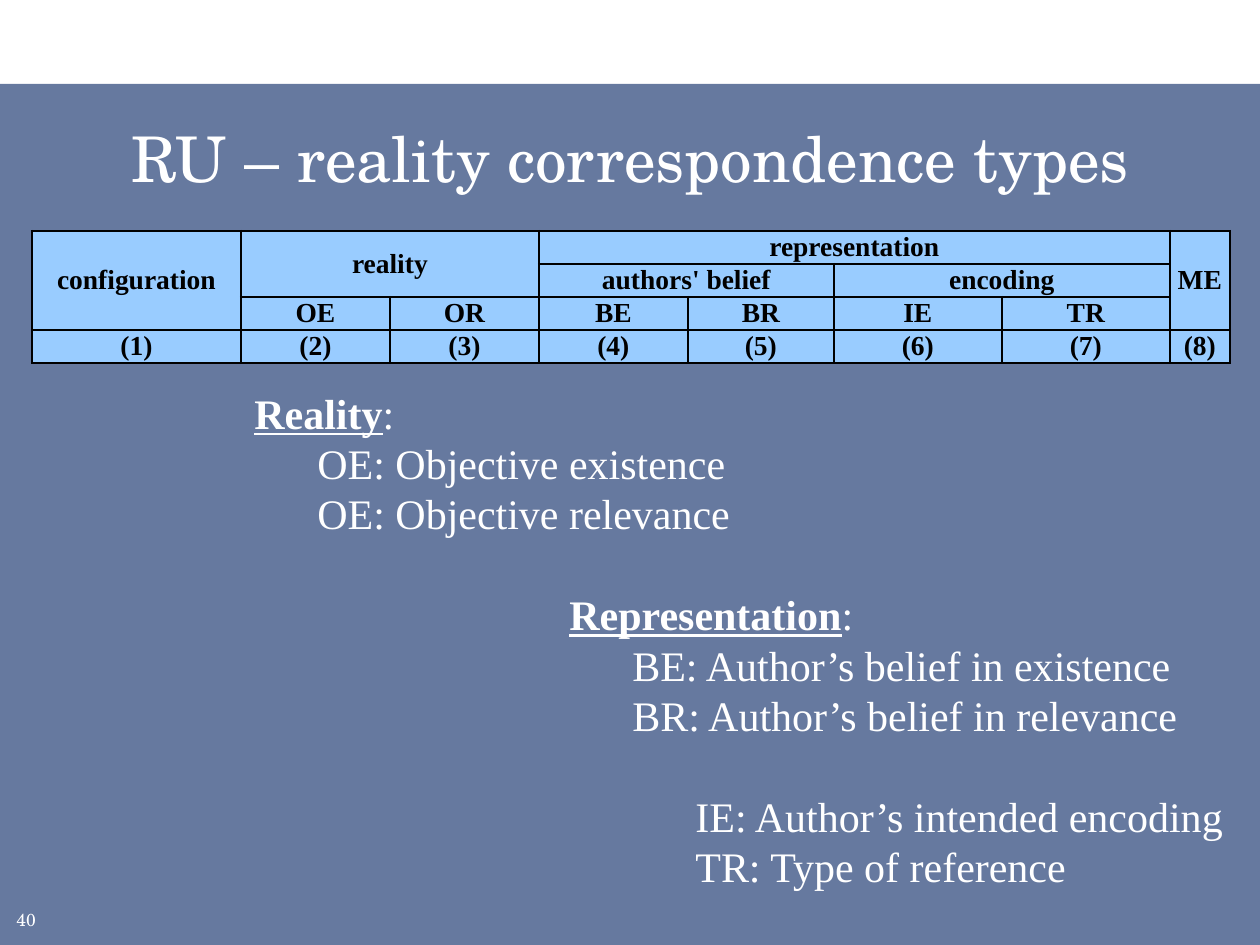
from lxml import etree
from pptx import Presentation
from pptx import util as u
from pptx.dml.color import RGBColor
from pptx.enum import shapes, text
from pptx.oxml import ns

PX = u.Inches(1) // 126
NAVY = RGBColor(0x00, 0x20, 0x60)
SKY = RGBColor(0x99, 0xCC, 0xFF)
WHITE = RGBColor(0xFF, 0xFF, 0xFF)
BLACK = RGBColor(0x00, 0x00, 0x00)
SCHOOL = "TeX Gyre Schola"
TIMES = "Times New Roman"
COLS = [209, 149, 149, 149, 146, 168, 168, 60]
ROW = 33
HEADS = [
    (0, 0, 3, 1, "configuration"), (0, 1, 2, 2, "reality"),
    (0, 3, 1, 4, "representation"), (0, 7, 3, 1, "ME"),
    (1, 3, 1, 2, "authors' belief"), (1, 5, 1, 2, "encoding"),
]
CODES = ["OE", "OR", "BE", "BR", "IE", "TR"]
TERMS = [
    (0, 0, "Reality", ":"),
    (1, 0, "", "OE: Objective existence"),
    (1, 0, "", "OE: Objective relevance"),
    (5, 1, "Representation", ":"),
    (6, 0, "", "BE: Author’s belief in existence"),
    (6, 0, "", "BR: Author’s belief in relevance"),
    (7, 1, "", "IE: Author’s intended encoding"),
    (7, 0, "", "TR: Type of reference"),
]


def px(*nums):
    return [u.Emu(n * PX) for n in nums]


def add_run(para, words, face, size, color, bold=False, line=False):
    run = para.add_run()
    run.text = words
    font = run.font
    font.name, font.size = face, u.Pt(size)
    font.bold, font.underline = bold, line
    font.color.rgb = color


def add_panel(slide, box):
    panel = slide.shapes.add_shape(shapes.MSO_SHAPE.RECTANGLE, *px(*box))
    panel.shadow.inherit = False
    panel.line.fill.background()
    panel.fill.solid()
    panel.fill.fore_color.rgb = NAVY
    tint = panel._element.spPr.find(".//" + ns.qn("a:srgbClr"))
    etree.SubElement(tint, ns.qn("a:alpha"), val="60000")
    slide.shapes._spTree.insert(2, panel._element)


def add_title(slide, box):
    title = slide.shapes.title
    title.left, title.top, title.width, title.height = px(*box)
    frame = title.text_frame
    frame.vertical_anchor = text.MSO_ANCHOR.MIDDLE
    para = frame.paragraphs[0]
    para.alignment = text.PP_ALIGN.CENTER
    add_run(para, "RU – reality correspondence types", SCHOOL, 36, WHITE)


def add_page(slide, box):
    frame = slide.shapes.add_textbox(*px(*box)).text_frame
    frame.word_wrap = True
    frame.margin_top = frame.margin_bottom = 0
    frame.vertical_anchor = text.MSO_ANCHOR.MIDDLE
    add_run(frame.paragraphs[0], "40", SCHOOL, 10, WHITE)


def style_cell(cell):
    props = cell._tc.get_or_add_tcPr()
    for side in ("lnL", "lnR", "lnT", "lnB"):
        edge = etree.SubElement(props, ns.qn("a:" + side), w=str(u.Pt(1.5)))
        fill = etree.SubElement(edge, ns.qn("a:solidFill"))
        etree.SubElement(fill, ns.qn("a:srgbClr"), val=str(BLACK))
    cell.fill.solid()
    cell.fill.fore_color.rgb = SKY
    cell.margin_left = cell.margin_right = 0
    cell.margin_top = cell.margin_bottom = 0
    cell.vertical_anchor = text.MSO_ANCHOR.MIDDLE


def add_grid(slide, left, top):
    box = px(left, top, sum(COLS), 4 * ROW)
    grid = slide.shapes.add_table(4, len(COLS), *box).table
    for col, wide in zip(grid.columns, COLS):
        col.width = px(wide)[0]
    for row in grid.rows:
        row.height = px(ROW)[0]
    for cell in grid.iter_cells():
        style_cell(cell)
        cell.text_frame.paragraphs[0].font.size = u.Pt(15.7)
    codes = [(2, i, 1, 1, code) for i, code in enumerate(CODES, 1)]
    marks = [(3, i, 1, 1, f"({i + 1})") for i in range(len(COLS))]
    for row, col, high, wide, words in HEADS + codes + marks:
        cell = grid.cell(row, col)
        if high * wide > 1:
            cell.merge(grid.cell(row + high - 1, col + wide - 1))
        para = cell.text_frame.paragraphs[0]
        para.alignment = text.PP_ALIGN.CENTER
        add_run(para, words, TIMES, 15.7, BLACK, bold=True)


def add_terms(slide, box):
    frame = slide.shapes.add_textbox(*px(*box)).text_frame
    frame.word_wrap = True
    frame.auto_size = text.MSO_AUTO_SIZE.SHAPE_TO_FIT_TEXT
    for i, (level, gap, head, words) in enumerate(TERMS):
        para = frame.add_paragraph() if i else frame.paragraphs[0]
        para.level = level
        props = para._p.get_or_add_pPr()
        props.set("marL", str(u.Inches(level / 2)))
        props.set("indent", "0")
        para.line_spacing = u.Pt(28.8)
        if gap:
            para.space_before = u.Pt(28.8)
        if head:
            add_run(para, head, TIMES, 24, WHITE, bold=True, line=True)
        add_run(para, words, TIMES, 24, WHITE)


def main():
    deck = Presentation()
    deck.slide_width, deck.slide_height = px(1260, 945)
    slide = deck.slides.add_slide(deck.slide_layouts[5])
    add_panel(slide, (0, 84, 1260, 861))
    add_page(slide, (4, 904, 59, 31))
    add_title(slide, (32, 105, 1197, 105))
    add_grid(slide, 32, 231)
    add_terms(slide, (242, 381, 1018, 522))
    deck.save("out.pptx")


if __name__ == "__main__":
    main()
